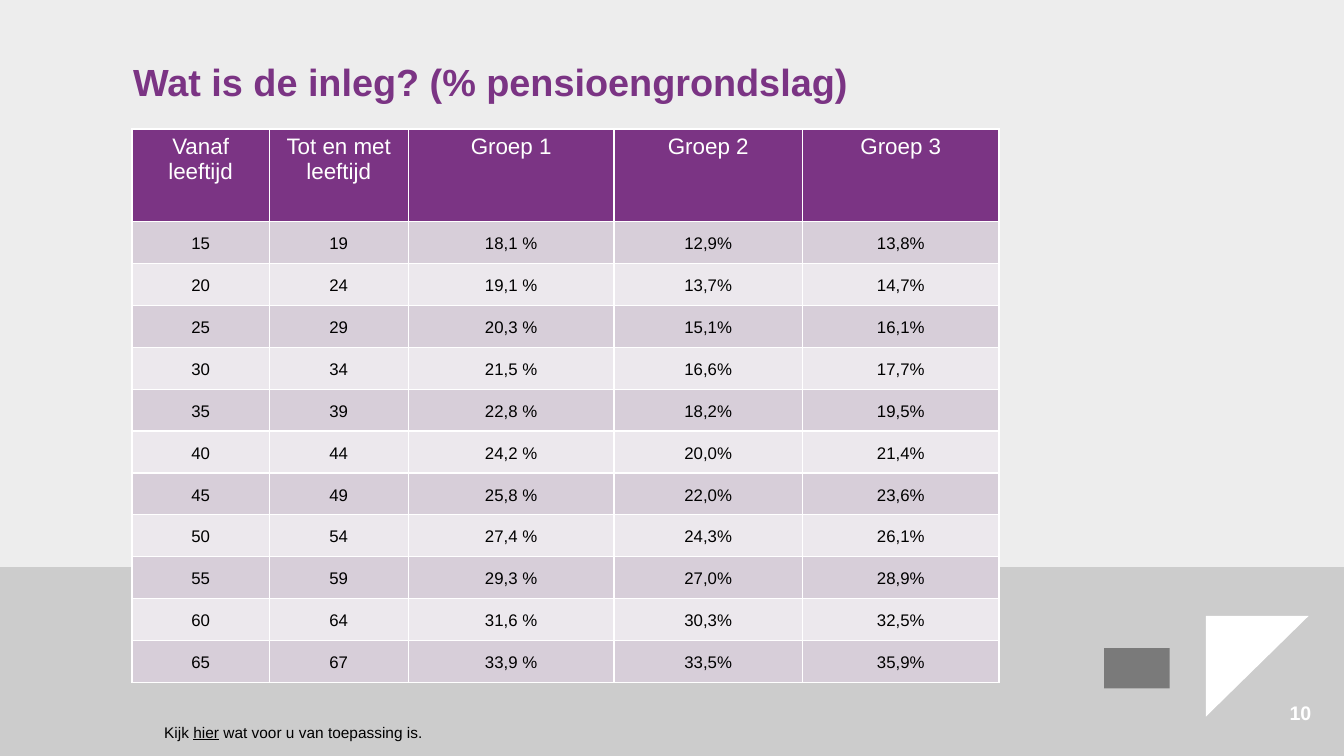
from dataclasses import dataclass
from lxml.etree import SubElement
from pptx import Presentation
from pptx.dml.color import RGBColor as RGB
from pptx.enum.shapes import MSO_SHAPE as Shape
from pptx.enum.text import MSO_ANCHOR as Anchor, PP_ALIGN as Align
from pptx.oxml.ns import qn
from pptx.util import Inches, Pt


@dataclass(frozen=True)
class Theme:
    font: str = "Arial"
    purple: str = "7B3484"
    white: str = "FFFFFF"
    black: str = "000000"
    light: str = "EDEDED"
    grey: str = "CCCCCC"
    mark: str = "7A7A7A"
    bands: tuple = ("D7CED9", "ECE8ED")
    title: int = 27
    head: int = 16
    number: int = 14
    body: int = 12
    note: int = 11


THEME = Theme()
WIDTH, HEIGHT = 13.33, 7.5
COLS = (1.36, 1.38, 2.04, 1.87, 1.95)
HEADS = ("Vanaf leeftijd", "Tot en met leeftijd", "Groep 1", "Groep 2", "Groep 3")
RATES = (
    ("15", "19", "18,1 %", "12,9%", "13,8%"),
    ("20", "24", "19,1 %", "13,7%", "14,7%"),
    ("25", "29", "20,3 %", "15,1%", "16,1%"),
    ("30", "34", "21,5 %", "16,6%", "17,7%"),
    ("35", "39", "22,8 %", "18,2%", "19,5%"),
    ("40", "44", "24,2 %", "20,0%", "21,4%"),
    ("45", "49", "25,8 %", "22,0%", "23,6%"),
    ("50", "54", "27,4 %", "24,3%", "26,1%"),
    ("55", "59", "29,3 %", "27,0%", "28,9%"),
    ("60", "64", "31,6 %", "30,3%", "32,5%"),
    ("65", "67", "33,9 %", "33,5%", "35,9%"),
)


def paint(shape, color):
    shape.shadow.inherit = False
    shape.fill.solid()
    shape.fill.fore_color.rgb = RGB.from_string(color)
    shape.line.fill.background()


def style(para, size, color, bold=False):
    font = para.font
    font.name, font.size, font.bold = THEME.font, Pt(size), bold
    font.color.rgb = RGB.from_string(color)


def add_rect(slide, box, color):
    rect = slide.shapes.add_shape(Shape.RECTANGLE, *map(Inches, box))
    paint(rect, color)


def add_label(slide, box, parts, size, color, bold=False, inset=(0, 0), wrap=True):
    """Write one line of (text, underlined) parts."""
    frame = slide.shapes.add_textbox(*map(Inches, box)).text_frame
    frame.word_wrap = wrap
    frame.margin_left = frame.margin_right = Inches(inset[0])
    frame.margin_top = frame.margin_bottom = Inches(inset[1])
    para = frame.paragraphs[0]
    for text, under in parts:
        run = para.add_run()
        run.text = text
        if under:
            run.font.underline = True
    style(para, size, color, bold)
    return frame


# Backdrop: grey floor, light wall
def add_back(slide, box):
    left, top, width, height = box
    floor = 2.63
    add_rect(slide, (left, top + height - floor, width, floor), THEME.grey)
    add_rect(slide, (left, top, width, height * 0.75), THEME.light)


# Corner: emblem block, white triangle and slide number
def add_corner(slide, box):
    left, top, width, height = box
    add_rect(slide, (left, top + 0.32, 0.65, 0.4), THEME.mark)
    tip, right, base = left + 1.01, left + 2.03, top + 1
    pen = slide.shapes.build_freeform(Inches(tip), Inches(base), scale=1.0)
    pen.add_line_segments(
        [(Inches(right), Inches(top)), (Inches(tip), Inches(top))], close=True)
    paint(pen.convert_to_shape(), THEME.white)
    add_label(slide, (left + width - 0.43, top + height - 0.28, 0.43, 0.28),
              [("10", False)], THEME.number, THEME.white, bold=True)


def add_title(slide, box):
    frame = add_label(slide, box, [("Wat is de inleg? (% pensioengrondslag)", False)],
                      THEME.title, THEME.purple, bold=True)
    frame.vertical_anchor = Anchor.BOTTOM


def add_edges(cell):
    props = cell._tc.get_or_add_tcPr()
    for side in "LRTB":
        line = SubElement(props, qn(f"a:ln{side}"), w=str(Pt(1)))
        fill = SubElement(line, qn("a:solidFill"))
        SubElement(fill, qn("a:srgbClr"), val=THEME.white)


def fill_cell(cell, text, row):
    is_head = row == 0
    add_edges(cell)
    cell.fill.solid()
    color = THEME.purple if is_head else THEME.bands[(row - 1) % 2]
    cell.fill.fore_color.rgb = RGB.from_string(color)
    cell.text = text
    para = cell.text_frame.paragraphs[0]
    para.alignment = Align.CENTER
    if is_head:
        style(para, THEME.head, THEME.white)
    else:
        cell.margin_left = cell.margin_right = Inches(0.07)
        cell.margin_top, cell.margin_bottom = Inches(0.1), Inches(0.08)
        para.line_spacing = 1.15
        style(para, THEME.body, THEME.black)


# Contribution rates by age and group
def add_rates(slide, box):
    rows = (HEADS, *RATES)
    table = slide.shapes.add_table(len(rows), len(COLS), *map(Inches, box)).table
    table.horz_banding = False
    for col, width in zip(table.columns, COLS):
        col.width = Inches(width)
    head = 0.92
    for i, texts in enumerate(rows):
        table.rows[i].height = Inches((box[3] - head) / len(RATES) if i else head)
        for j, text in enumerate(texts):
            fill_cell(table.cell(i, j), text, i)


def add_note(slide, box):
    parts = [("Kijk ", False), ("hier", True), (" wat voor u van toepassing is.", False)]
    add_label(slide, box, parts, THEME.note, THEME.black, inset=(0.1, 0.05), wrap=False)


def main():
    deck = Presentation()
    deck.slide_width, deck.slide_height = Inches(WIDTH), Inches(HEIGHT)
    slide = deck.slides.add_slide(deck.slide_layouts[6])
    add_back(slide, (0, 0, WIDTH, HEIGHT))
    add_corner(slide, (10.95, 6.11, 2.27, 1.12))
    add_title(slide, (1.32, 0.54, 9.51, 0.49))
    add_rates(slide, (1.31, 1.28, sum(COLS), 5.49))
    add_note(slide, (1.53, 7.12, 2.78, 0.29))
    deck.save("out.pptx")


if __name__ == "__main__":
    main()
